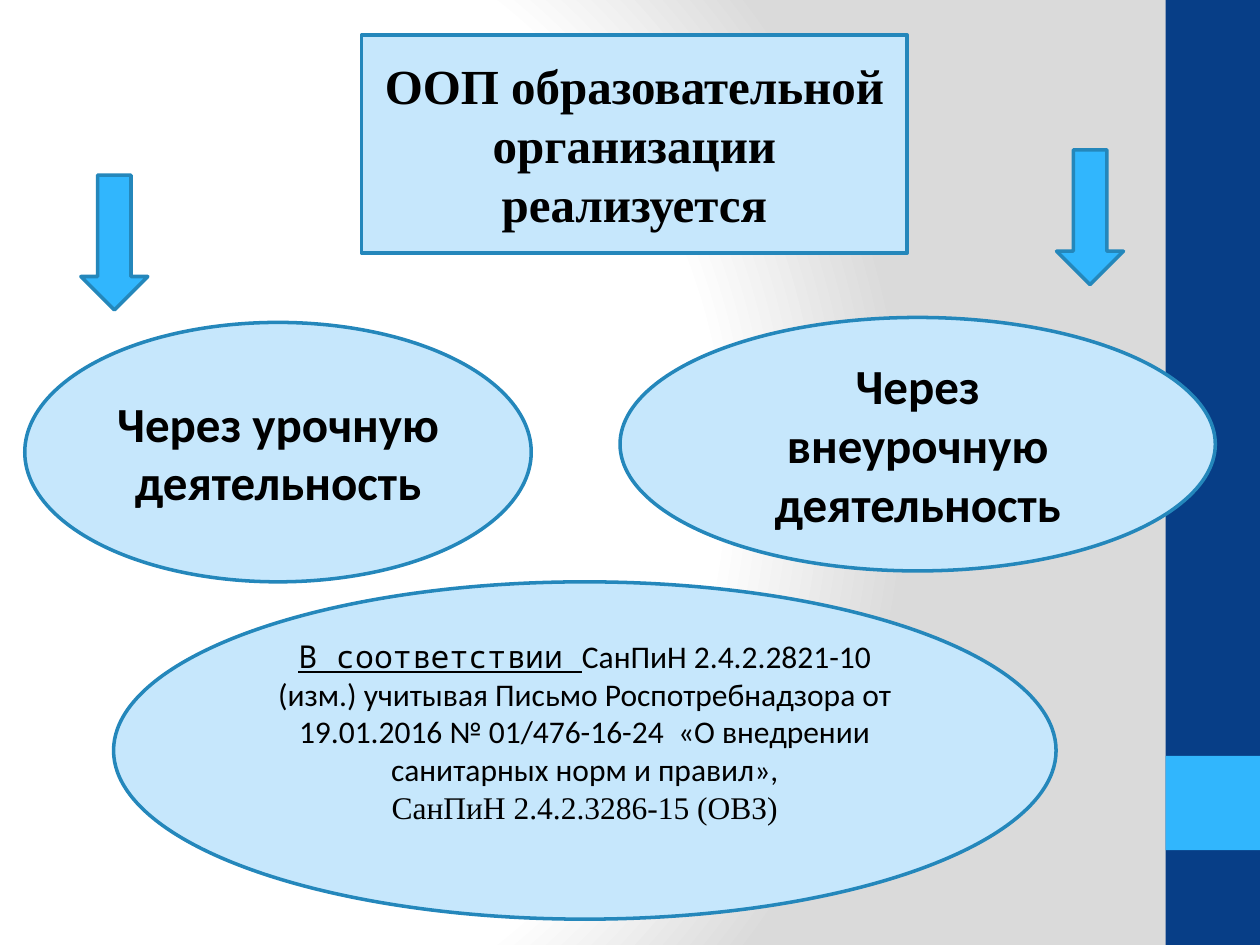
from dataclasses import dataclass

import pptx
import pptx.dml.color
import pptx.enum.shapes
import pptx.enum.text
import pptx.oxml
import pptx.oxml.ns
import pptx.util

KIND = pptx.enum.shapes.MSO_SHAPE
Cm = pptx.util.Cm
WIDE, HIGH = 25.4, 19.05
NAVY, SKY, PALE, EDGE, BLACK = "073E87", "31B6FD", "C6E7FC", "2487BB", "000000"

BACK = f"""<p:bg {pptx.oxml.ns.nsdecls("p", "a")}><p:bgPr><a:gradFill rotWithShape="1">
<a:gsLst><a:gs pos="0"><a:srgbClr val="FFFFFF"/></a:gs>
<a:gs pos="75000"><a:srgbClr val="FFFFFF"/></a:gs>
<a:gs pos="100000"><a:srgbClr val="DADADA"/></a:gs></a:gsLst>
<a:path path="circle"><a:fillToRect l="20000" t="50000" r="100000" b="50000"/></a:path>
</a:gradFill><a:effectLst/></p:bgPr></p:bg>"""


@dataclass
class Run:
    text: str
    font: dict


@dataclass
class Box:
    kind: int
    left: float
    top: float
    width: float
    height: float
    fill: str = PALE
    edge: str | None = EDGE
    paras: tuple[tuple[Run, ...], ...] = ()
    foot: float = 0.13  # bottom inset


def style(face: str, size: int, **more: bool) -> dict:
    return {"name": face, "size": pptx.util.Pt(size), **more}


def paint(form, code: str) -> None:
    form.solid()
    form.fore_color.rgb = pptx.dml.color.RGBColor.from_string(code)


def write(frame, box: Box) -> None:
    frame.word_wrap = True
    frame.vertical_anchor = pptx.enum.text.MSO_ANCHOR.MIDDLE
    frame.margin_bottom = Cm(box.foot)
    for i, runs in enumerate(box.paras):
        para = frame.add_paragraph() if i else frame.paragraphs[0]
        para.alignment = pptx.enum.text.PP_ALIGN.CENTER
        for part in runs:
            run = para.add_run()
            run.text = part.text
            paint(run.font.fill, BLACK)
            for key, value in part.font.items():
                setattr(run.font, key, value)


def draw(slide, box: Box) -> None:
    place = (Cm(n) for n in (box.left, box.top, box.width, box.height))
    shape = slide.shapes.add_shape(box.kind, *place)
    shape.shadow.inherit = False
    paint(shape.fill, box.fill)
    if box.edge:
        paint(shape.line.fill, box.edge)
        shape.line.width = pptx.util.Pt(2)
    else:
        shape.line.fill.background()
    if box.paras:
        write(shape.text_frame, box)


TITLE = style("Times New Roman", 28, bold=True)
HEAD = style("Calibri", 28, bold=True)
LEAD = style("Noto Sans Mono", 18, underline=True)
BODY = style("Calibri", 18)
LAST = style("Times New Roman", 18)

BAR = 1.9
EDGE_X = WIDE - BAR
BOXES = [
    Box(KIND.RECTANGLE, EDGE_X, 0, BAR, HIGH, NAVY, None),
    Box(KIND.RECTANGLE, EDGE_X, 15.24, BAR, BAR, SKY, None),
    Box(KIND.RECTANGLE, 7.29, 0.71, 11, 4.39, paras=(
        (Run("ООП образовательной организации", TITLE),),
        (Run("реализуется", TITLE),),
    )),
    Box(KIND.OVAL, 0.5, 6.5, 10.21, 5.23, paras=(
        (Run("Через урочную деятельность", HEAD),),
    )),
    Box(KIND.OVAL, 12.5, 6.4, 12, 5.11, paras=(
        (Run("Через внеурочную деятельность", HEAD),),
    )),
    Box(KIND.OVAL, 2.29, 11.73, 19, 6.8, foot=0.9, paras=(
        (
            Run("В соответствии ", LEAD),
            Run("СанПиН 2.4.2.2821-10 (изм.) учитывая Письмо Роспотребнадзора "
                "от 19.01.2016 № 01/476-16-24  «О внедрении санитарных норм "
                "и правил»,", BODY),
        ),
        (Run("СанПиН 2.4.2.3286-15 (ОВЗ)", LAST),),
    )),
    *(Box(KIND.DOWN_ARROW, x, y, 1.35, 2.72, SKY)
      for x, y in ((1.63, 3.53), (21.3, 3.02))),
]


def main() -> None:
    deck = pptx.Presentation()
    deck.slide_width, deck.slide_height = Cm(WIDE), Cm(HIGH)
    slide = deck.slides.add_slide(deck.slide_layouts[6])
    slide.element.cSld.insert(0, pptx.oxml.parse_xml(BACK))
    for box in BOXES:
        draw(slide, box)
    deck.save("out.pptx")


if __name__ == "__main__":
    main()
